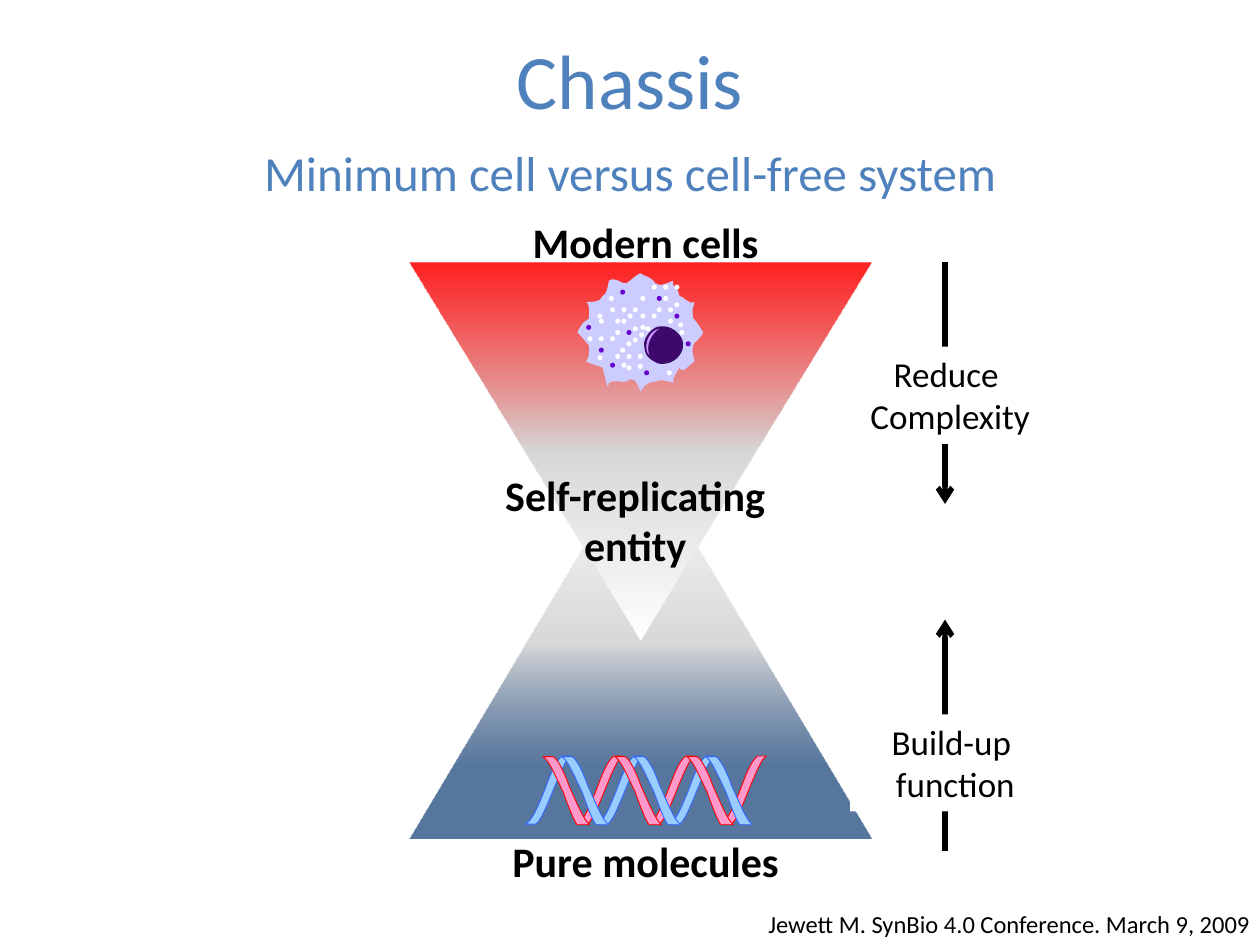
from lxml import etree
from pptx import Presentation
from pptx.dml.color import RGBColor
from pptx.enum.shapes import MSO_CONNECTOR, MSO_SHAPE
from pptx.enum.text import MSO_ANCHOR, MSO_AUTO_SIZE, PP_ALIGN
from pptx.oxml.ns import qn
from pptx.util import Cm, Pt

TRIANGLE, OVAL, RECTANGLE = MSO_SHAPE.ISOSCELES_TRIANGLE, MSO_SHAPE.OVAL, MSO_SHAPE.RECTANGLE
STRAIGHT = MSO_CONNECTOR.STRAIGHT
LEFT, CENTER = PP_ALIGN.LEFT, PP_ALIGN.CENTER
TOP, MIDDLE = MSO_ANCHOR.TOP, MSO_ANCHOR.MIDDLE
GROW, FIXED = MSO_AUTO_SIZE.SHAPE_TO_FIT_TEXT, MSO_AUTO_SIZE.NONE

COLORS = {
    "heading": "4F81BD", "text": "000000", "paper": "FFFFFF",
    "complex": "FF0000", "simple": "1F497D", "middle": "D7D7D7",
    "blue": "99CCFF", "blue edge": "3366FF", "pink": "FF99CC", "pink edge": "FF0000",
    "cytoplasm": "CCCCFF", "nucleus": "3D096D", "shine": "CC99FF", "granule": "6600CC",
}
BODY = {"word_wrap": True, "auto_size": GROW, "vertical_anchor": TOP}
TITLE = {"word_wrap": True, "auto_size": FIXED, "vertical_anchor": MIDDLE}
STRONG = {"size": Pt(24), "bold": True}

SPAN = 2.54
PITCH = 1.45
DOT = 0.1

RISING = [(29, 15), (12, 8, 2, 4, 0, 0), (0, 7), (3, 12, 16, 17, 27, 21),
          (39, 26, 50, 30, 54, 36), (54, 28), (51, 24, 41, 20, 29, 15)]
FALLING = [(24, 16), (13, 20, 2, 25, 0, 29), (0, 37), (3, 32, 16, 27, 28, 21),
           (39, 17, 50, 13, 54, 10), (54, 0), (50, 5, 37, 10, 24, 16)]
STRANDS = [(RISING, "blue", 0), (RISING, "pink", 1.04),
           (FALLING, "blue", 0.74), (FALLING, "pink", 0.36)]

MEMBRANE = [
    (100, 47), (96, 54, 93, 54, 92, 57), (91, 63, 91, 60, 93, 70), (88, 73, 84, 80, 81, 75),
    (78, 80, 76, 82, 76, 87), (70, 85, 66, 84, 62, 86), (58, 86, 54, 87, 50, 94),
    (47, 84, 43, 82, 39, 86), (35, 87, 30, 84, 25, 87), (24, 94, 23, 86, 20, 75),
    (17, 73, 13, 73, 7, 70), (9, 68, 10, 62, 9, 57), (8, 56, 5, 52, 0, 47),
    (5, 36, 8, 38, 9, 36), (10, 30, 9, 22, 7, 23), (13, 22, 17, 24, 20, 18),
    (23, 17, 24, 12, 25, 6), (30, 2, 35, 9, 39, 8), (43, 5, 47, 1, 50, 0),
    (54, 3, 58, 2, 62, 8), (66, 11, 70, 8, 76, 6), (76, 15, 78, 6, 81, 18),
    (84, 18, 88, 25, 93, 23), (91, 31, 91, 27, 92, 36), (93, 36, 96, 41, 100, 47)]
NUCLEUS = [(61, 70), (65, 73, 69, 72, 73, 71), (77, 70, 87, 63, 83, 52),
           (77, 41, 67, 41, 62, 43), (57, 46, 54, 50, 53, 55), (53, 60, 53, 66, 61, 70)]
SHINE = [(65, 44), (55, 46, 52, 60, 57, 65), (54, 56, 59, 48, 65, 44)]
DOTS = {
    "paper": [
        (48, 64), (30, 64), (39, 64), (26, 50), (8, 50), (17, 50), (25, 18), (39, 54),
        (30, 45), (44, 27), (35, 36), (26, 27), (35, 27), (54, 42), (44, 51), (30, 36),
        (44, 42), (16, 65), (35, 71), (39, 73), (48, 72), (17, 36), (81, 45), (16, 32),
        (59, 32), (50, 41), (40, 32), (50, 32), (80, 39), (72, 36), (63, 27), (72, 27),
        (77, 9), (68, 18), (59, 9), (68, 9), (77, 23), (49, 47), (71, 77), (34, 59), (50, 18)],
    "granule": [(17, 59), (39, 45), (26, 71), (7, 41), (34, 13), (77, 32), (63, 18),
                (53, 77), (86, 54)],
}


def rgb(color):
    return RGBColor.from_string(COLORS[color])


def paint(shape, fill, edge=None):
    shape.shadow.inherit = False
    shape.fill.solid()
    shape.fill.fore_color.rgb = rgb(fill)
    if edge:
        shape.line.color.rgb = rgb(edge)
        shape.line.width = Pt(0.5)
    else:
        shape.line.fill.background()


def write(holder, lines, font, color="text", align=CENTER, frame=BODY):
    for key, value in frame.items():
        setattr(holder.text_frame, key, value)
    holder.text_frame.text = "\n".join(lines)
    for paragraph in holder.text_frame.paragraphs:
        paragraph.alignment = align
        for key, value in {"name": "Calibri", **font}.items():
            setattr(paragraph.font, key, value)
        paragraph.font.color.rgb = rgb(color)


def add_text(slide, box, text, font, **style):
    write(slide.shapes.add_textbox(*map(Cm, box)), [text], font, **style)


def add_outline(shapes, left, top, segments, fill, edge=None):
    unit = Cm(SPAN) / 100
    corners = [segment[-2:] for segment in segments]
    x_min, y_min = map(min, zip(*corners))
    builder = shapes.build_freeform(*corners[0], scale=unit)
    builder.add_line_segments(corners[1:], close=True)
    outline = builder.convert_to_shape(Cm(left), Cm(top))
    paint(outline, fill, edge)
    edges = list(outline._element.iter(qn("a:lnTo")))
    for straight, segment in zip(edges, segments[1:]):
        if len(segment) == 6:
            curve = etree.Element(qn("a:cubicBezTo"))
            for x, y in zip(segment[::2], segment[1::2]):
                etree.SubElement(curve, qn("a:pt"), x=str(x - x_min), y=str(y - y_min))
            straight.getparent().replace(straight, curve)
    return outline


def add_header(slide, left, top, width):
    title = slide.shapes.title
    frame = {"left": left + 1.27, "top": top, "width": width - 2.54, "height": 3.18}
    for key, value in frame.items():
        setattr(title, key, Cm(value))
    write(title, ["Chassis"], {"size": Pt(44)}, color="heading", frame=TITLE)
    add_text(slide, (left, top + 2.74, width, 1.45), "Minimum cell versus cell-free system",
             {"size": Pt(28)}, color="heading")


def add_fading_triangle(slide, box, rotation, stops):
    triangle = slide.shapes.add_shape(TRIANGLE, *map(Cm, box))
    triangle.rotation = rotation
    triangle.shadow.inherit = False
    triangle.line.fill.background()
    triangle.fill.gradient()
    triangle.fill.gradient_angle = 90
    stop_list = triangle._element.spPr.find(".//" + qn("a:gsLst"))
    for old_stop in list(stop_list):
        stop_list.remove(old_stop)
    for position, color, opacity in stops:
        stop = etree.SubElement(stop_list, qn("a:gs"), pos=str(position * 1000))
        shade = etree.SubElement(stop, qn("a:srgbClr"), val=COLORS[color])
        if opacity < 100:
            etree.SubElement(shade, qn("a:alpha"), val=str(opacity * 1000))


def add_hourglass(slide, left, top, width):
    fade = [(50, "middle", 100), (100, "paper", 100)]
    add_fading_triangle(slide, (left, top + 3.81, width, 7.8), 0, [(19, "simple", 74)] + fade)
    add_fading_triangle(slide, (left, top, width, 7.62), 180, [(0, "complex", 86)] + fade)


def add_stage_names(slide, left, top, width):
    for name, dx, dy, height in [("Self-replicating entity", 0.84, 4.05, 2.31),
                                 ("Modern cells", 1.05, -1.04, 1.27),
                                 ("Pure molecules", 1.05, 11.43, 1.27)]:
        add_text(slide, (left + dx, top + dy, width - 1.9, height), name, STRONG)


def add_process(slide, x, start, end, label_box, lines):
    arrow = slide.shapes.add_connector(STRAIGHT, Cm(x), Cm(start), Cm(x), Cm(end))
    arrow.line.color.rgb = rgb("text")
    arrow.line.width = Pt(3)
    etree.SubElement(arrow.line._get_or_add_ln(), qn("a:tailEnd"), type="arrow")
    etree.SubElement(arrow._element.spPr, qn("a:effectLst"))
    label = slide.shapes.add_shape(RECTANGLE, *map(Cm, label_box))
    paint(label, "paper")
    write(label, lines, {"size": Pt(20)})


def add_helix(slide, left, top):
    helix = slide.shapes.add_group_shape().shapes
    for strand, color, offset in STRANDS:
        for turn in range(3):
            x = left + offset + turn * PITCH
            add_outline(helix, x, top, strand, color, color + " edge").rotation = 90


def add_cell(slide, left, top):
    cell = slide.shapes.add_group_shape().shapes
    for part, color in [(MEMBRANE, "cytoplasm"), (NUCLEUS, "nucleus"), (SHINE, "shine")]:
        add_outline(cell, left, top, part, color)
    for color, places in DOTS.items():
        for x, y in places:
            box = left + x * SPAN / 100, top + y * SPAN / 100, DOT, DOT
            paint(cell.add_shape(OVAL, *map(Cm, box)), color)


def main():
    deck = Presentation()
    deck.slide_width, deck.slide_height = Cm(25.4), Cm(19.05)
    slide = deck.slides.add_slide(deck.slide_layouts[5])
    add_header(slide, 0, 0, 25.4)
    add_hourglass(slide, 8.26, 5.29, 9.31)
    add_process(slide, 19.05, 5.29, 10.16, (16.93, 6.99, 4.45, 1.96), ["Reduce ", "Complexity"])
    add_process(slide, 19.05, 17.15, 12.49, (17.14, 14.4, 4.24, 1.96), ["Build-up ", "function"])
    add_stage_names(slide, 8.26, 5.29, 9.31)
    add_helix(slide, 10.37, 15.47)
    add_cell(slide, 11.64, 5.51)
    add_text(slide, (15.24, 18.21, 11.43, 0.86), "Jewett M. SynBio 4.0 Conference. March 9, 2009",
             {"size": Pt(14)}, align=LEFT)
    deck.save("out.pptx")


if __name__ == "__main__":
    main()
